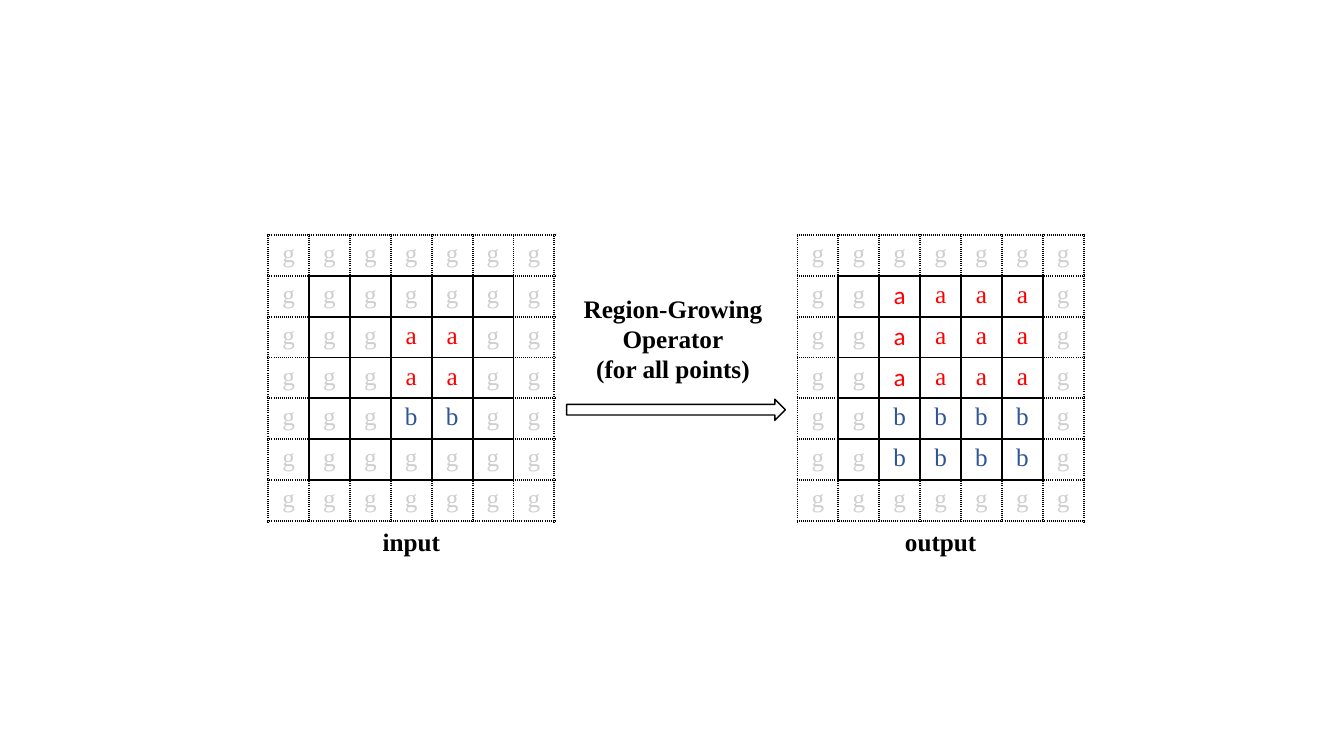
from lxml.etree import SubElement
from pptx import Presentation
from pptx.dml.color import RGBColor
from pptx.enum.shapes import MSO_SHAPE
from pptx.enum.text import PP_ALIGN
from pptx.oxml.ns import qn
from pptx.util import Inches, Pt

# A capital letter marks a cell set in the alternative font.
GRIDS = {
    "input": ["ggggggg", "ggggggg", "gggaagg", "gggaagg",
              "gggbbgg", "ggggggg", "ggggggg"],
    "output": ["ggggggg", "ggAaaag", "ggAaaag", "ggAaaag",
               "ggbbbbg", "ggbbbbg", "ggggggg"],
}
OPERATOR = ["Region-Growing", "Operator", "(for all points)"]

COLORS = {"g": "D0CECE", "a": "FF0000", "b": "2F5597",
          "black": "000000", "white": "FFFFFF"}
FONT, ALT_FONT = "Times New Roman", "Calibri"
SIZE = 18

N = 7
SIDE = 2.84
TOP = 2.33
LEFTS = {"input": 2.66, "output": 7.91}
CAPTION_H = 0.4
ARROW = (5.62, 3.96, 2.17, 0.21)
OPERATOR_BOX = (5.62, 2.86, 2.11, 1.01)
NEIGHBOURS = {"a:lnL": (0, -1), "a:lnR": (0, 1),
              "a:lnT": (-1, 0), "a:lnB": (1, 0)}


def rgb(name):
    return RGBColor.from_string(COLORS[name])


def style(p, color="black", font=FONT, bold=False):
    p.alignment = PP_ALIGN.CENTER
    f = p.font
    f.name, f.size, f.bold = font, Pt(SIZE), bold
    f.color.rgb = rgb(color)


def is_inner(row, col):
    return 0 < row < N - 1 and 0 < col < N - 1


def add_borders(cell, row, col):
    """Solid where the edge touches the inner grid, dotted elsewhere."""
    tcPr = cell._tc.get_or_add_tcPr()
    for i, (tag, (dr, dc)) in enumerate(NEIGHBOURS.items()):
        solid = is_inner(row, col) or is_inner(row + dr, col + dc)
        ln = SubElement(tcPr, qn(tag), w=str(Pt(1.5)))
        fill = SubElement(ln, qn("a:solidFill"))
        SubElement(fill, qn("a:srgbClr"), val=COLORS["black"])
        SubElement(ln, qn("a:prstDash"), val="solid" if solid else "sysDot")
        tcPr.insert(i, ln)


def add_grid(s, left, rows):
    table = s.shapes.add_table(N, N, Inches(left), Inches(TOP),
                               Inches(SIDE), Inches(SIDE)).table
    table.first_row = table.horz_banding = False
    for line in [*table.columns]:
        line.width = Inches(SIDE / N)
    for line in table.rows:
        line.height = Inches(SIDE / N)
    for r, letters in enumerate(rows):
        for c, letter in enumerate(letters):
            cell = table.cell(r, c)
            label = letter.lower()
            cell.text = label
            style(cell.text_frame.paragraphs[0], label,
                  ALT_FONT if letter.isupper() else FONT)
            if label == "g":
                cell.fill.background()
            else:
                cell.fill.solid()
                cell.fill.fore_color.rgb = rgb("white")
            add_borders(cell, r, c)


def add_label(s, box, lines):
    tf = s.shapes.add_textbox(*map(Inches, box)).text_frame
    tf.word_wrap = True
    tf.text = "\n".join(lines)
    for p in tf.paragraphs:
        style(p, bold=True)


def add_arrow(s):
    sp = s.shapes.add_shape(MSO_SHAPE.RIGHT_ARROW, *map(Inches, ARROW))
    sp.shadow.inherit = False
    sp.fill.solid()
    sp.fill.fore_color.rgb = rgb("white")
    sp.line.color.rgb = rgb("black")
    sp.line.width = Pt(1)


def main():
    prs = Presentation()
    prs.slide_width, prs.slide_height = Inches(13.33), Inches(7.5)
    s = prs.slides.add_slide(prs.slide_layouts[6])
    for caption, rows in GRIDS.items():
        left = LEFTS[caption]
        add_grid(s, left, rows)
        add_label(s, (left, TOP + SIDE, SIDE, CAPTION_H), [caption])
    add_arrow(s)
    add_label(s, OPERATOR_BOX, OPERATOR)
    prs.save("out.pptx")


if __name__ == "__main__":
    main()
